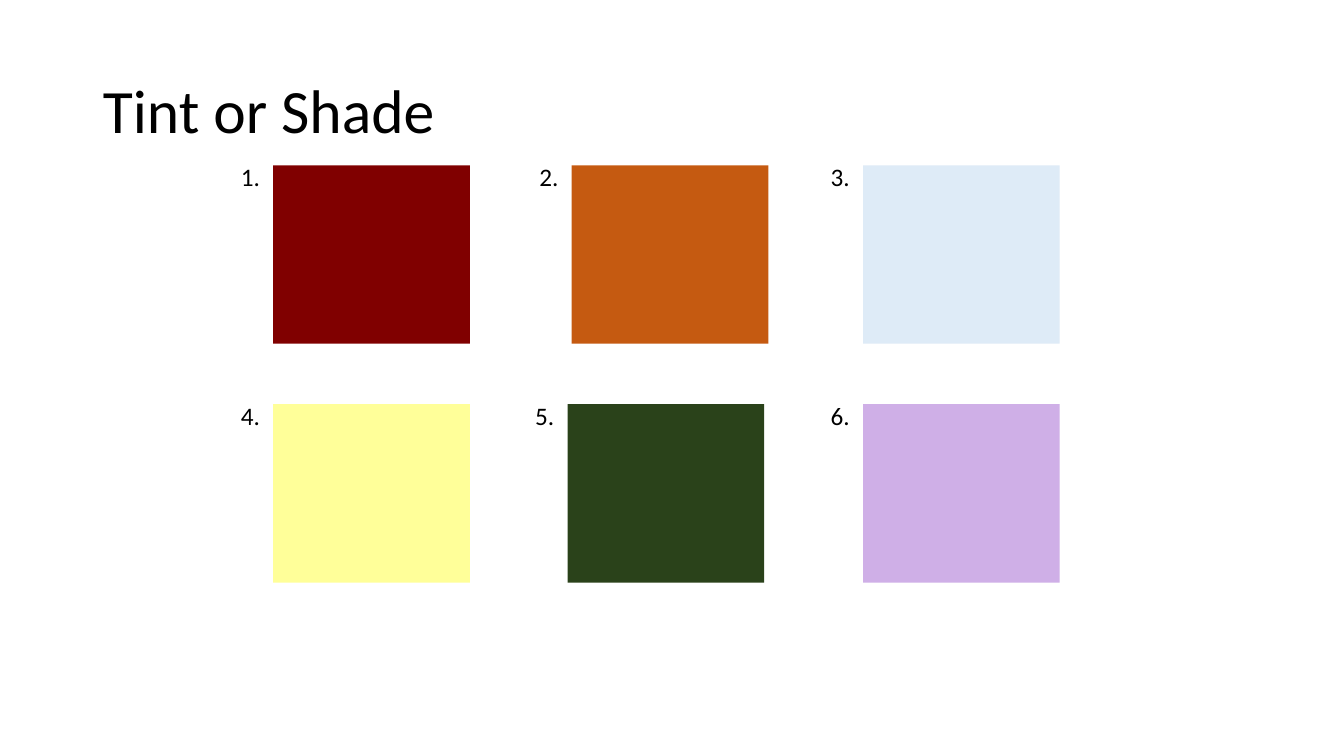
from dataclasses import dataclass

from pptx import Presentation
from pptx.dml.color import RGBColor
from pptx.enum.shapes import MSO_SHAPE
from pptx.enum.text import MSO_ANCHOR, MSO_AUTO_SIZE, PP_ALIGN
from pptx.slide import Slide
from pptx.text.text import TextFrame
from pptx.util import Emu, Pt

PX = 9144  # EMU in one px, at 100 px to the inch


@dataclass(frozen=True)
class Theme:
    font: str = "Calibri"
    ink: str = "000000"
    title_size: int = 44
    label_size: int = 18
    maroon: str = "800000"
    orange: str = "C55A11"
    pale_blue: str = "DEEBF7"
    yellow: str = "FFFF99"
    dark_green: str = "2A421A"
    lilac: str = "CFAFE7"


@dataclass(frozen=True)
class Swatch:
    number: int
    left: int
    top: int
    color: str


THEME = Theme()
SWATCH_WIDTH, SWATCH_HEIGHT = 195, 177
LABEL_WIDTH, LABEL_HEIGHT, LABEL_RISE = 42, 40, 9
TOP_ROW, BOTTOM_ROW = 164, 401
LEFT_COLUMN, RIGHT_COLUMN = 271, 856

SWATCHES = [
    Swatch(1, LEFT_COLUMN, TOP_ROW, THEME.maroon),
    Swatch(2, 567, TOP_ROW, THEME.orange),
    Swatch(3, RIGHT_COLUMN, TOP_ROW, THEME.pale_blue),
    Swatch(4, LEFT_COLUMN, BOTTOM_ROW, THEME.yellow),
    Swatch(5, 563, BOTTOM_ROW, THEME.dark_green),
    Swatch(6, RIGHT_COLUMN, BOTTOM_ROW, THEME.lilac),
]


def px(*lengths: int) -> list[Emu]:
    return [Emu(length * PX) for length in lengths]


def write_text(frame: TextFrame, text: str, *, size: int, color: str = THEME.ink,
               anchor: MSO_ANCHOR = MSO_ANCHOR.TOP, line_spacing: float = 1.0) -> None:
    frame.word_wrap = True
    frame.vertical_anchor = anchor
    para = frame.paragraphs[0]
    para.alignment = PP_ALIGN.LEFT
    para.line_spacing = line_spacing
    span = para.add_run()
    span.text = text
    span.font.name = THEME.font
    span.font.size = Pt(size)
    span.font.color.rgb = RGBColor.from_string(color)


def draw_title(page: Slide, text: str) -> None:
    title = page.shapes.title
    title.left, title.top, title.width, title.height = px(92, 40, 1150, 145)
    write_text(title.text_frame, text, size=THEME.title_size,
               anchor=MSO_ANCHOR.MIDDLE, line_spacing=0.9)


def draw_swatch(page: Slide, swatch: Swatch) -> None:
    box = page.shapes.add_shape(
        MSO_SHAPE.RECTANGLE, *px(swatch.left, swatch.top, SWATCH_WIDTH, SWATCH_HEIGHT))
    box.shadow.inherit = False
    box.fill.solid()
    box.fill.fore_color.rgb = RGBColor.from_string(swatch.color)
    box.line.fill.background()


def draw_label(page: Slide, swatch: Swatch) -> None:
    label = page.shapes.add_textbox(
        *px(swatch.left - LABEL_WIDTH, swatch.top - LABEL_RISE, LABEL_WIDTH, LABEL_HEIGHT))
    write_text(label.text_frame, f"{swatch.number}.", size=THEME.label_size)
    label.text_frame.auto_size = MSO_AUTO_SIZE.SHAPE_TO_FIT_TEXT


def main() -> None:
    deck = Presentation()
    deck.slide_width, deck.slide_height = px(1333, 750)
    page = deck.slides.add_slide(deck.slide_layouts[5])  # title only

    # Heading
    draw_title(page, "Tint or Shade")

    # Numbered colour swatches
    for swatch in SWATCHES:
        draw_swatch(page, swatch)
        draw_label(page, swatch)

    deck.save("out.pptx")


if __name__ == "__main__":
    main()
